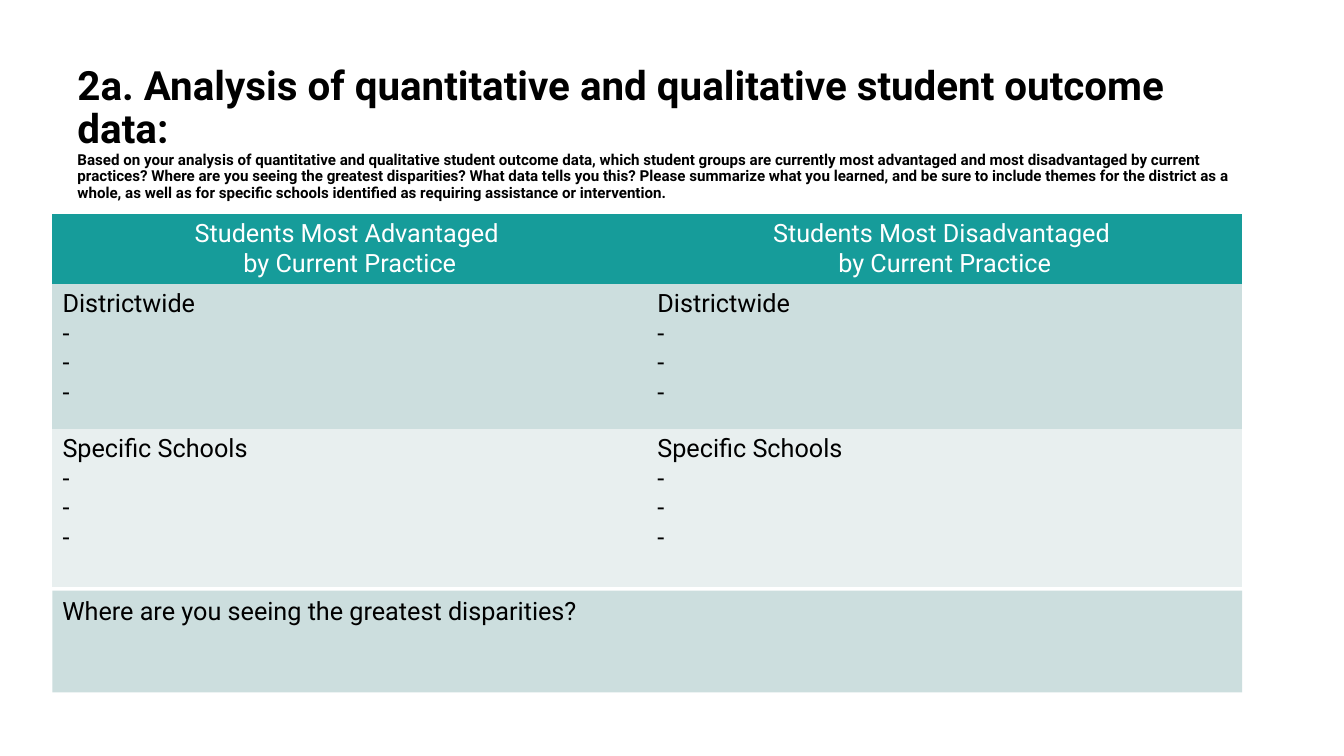
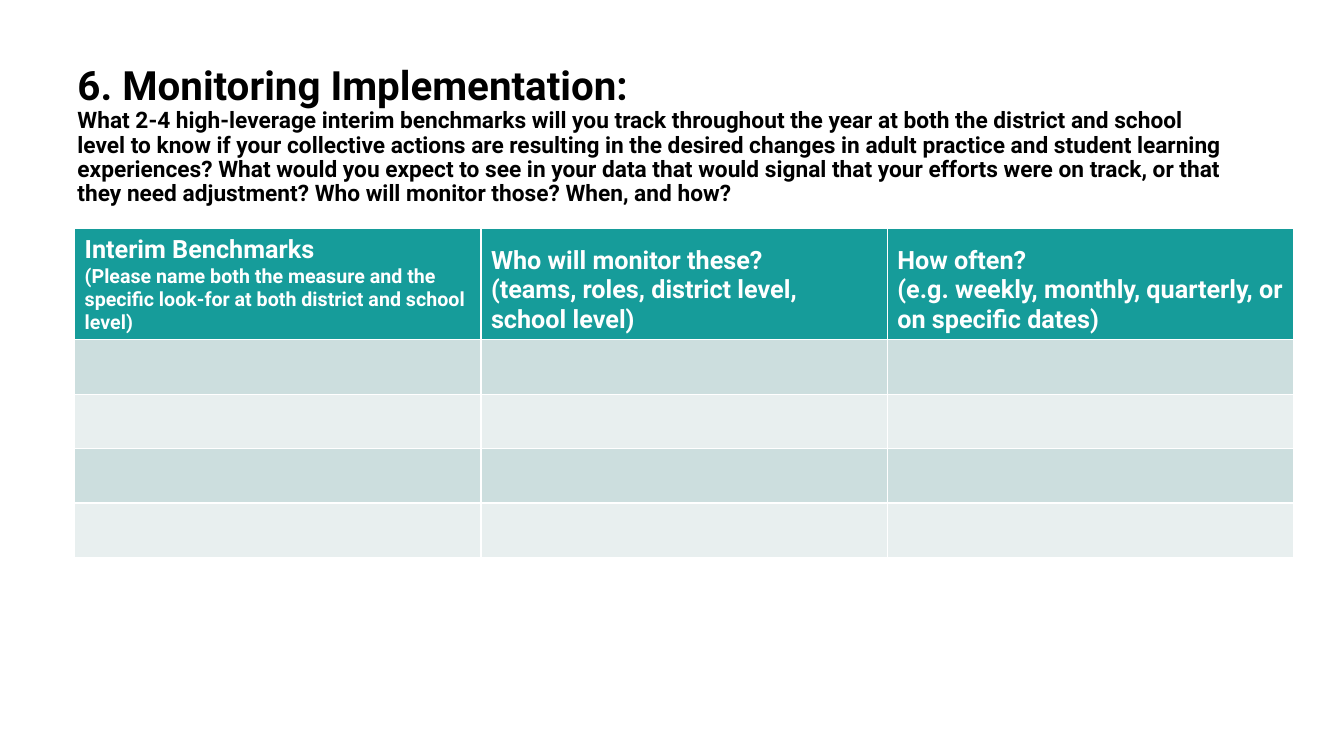
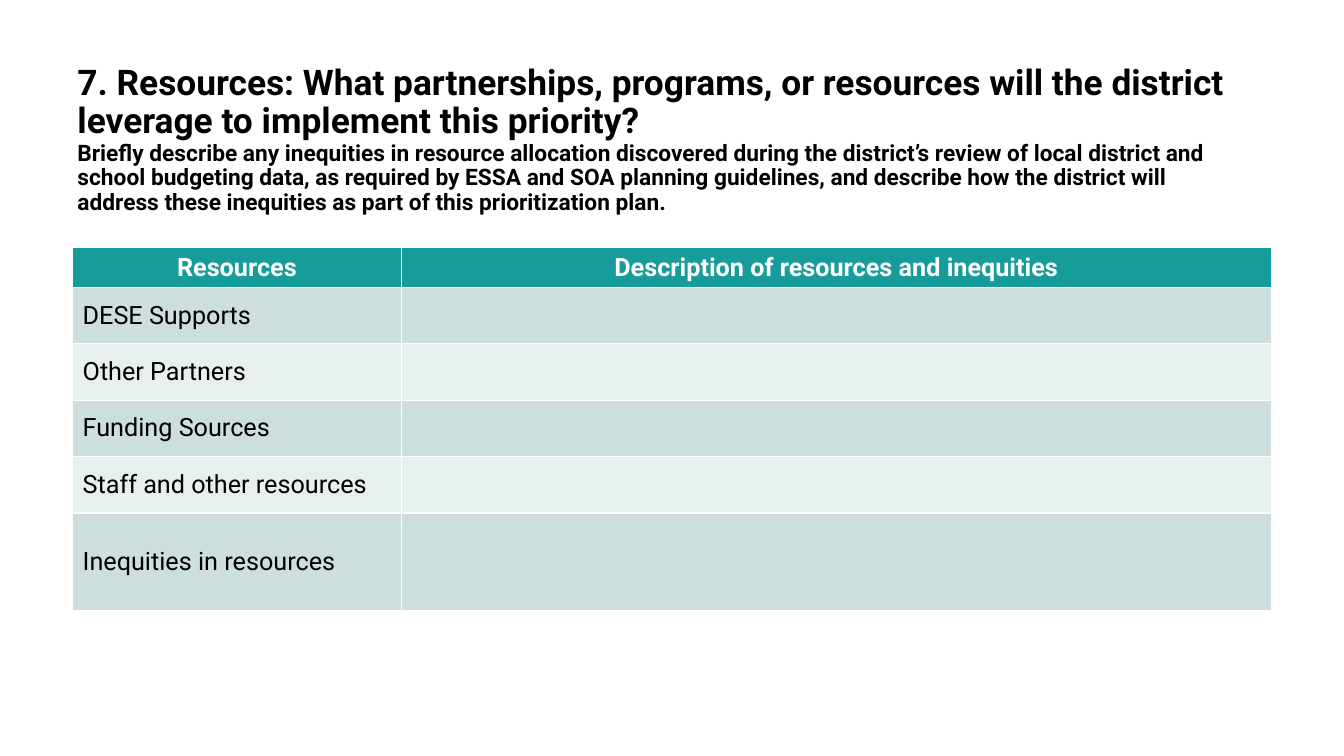
from dataclasses import dataclass

from lxml.etree import SubElement
from pptx import Presentation
from pptx.dml.color import RGBColor
from pptx.enum.shapes import MSO_SHAPE
from pptx.enum.text import MSO_ANCHOR as ANCHOR, PP_ALIGN as ALIGN
from pptx.oxml.ns import qn
from pptx.util import Inches, Pt


@dataclass(frozen=True)
class Theme:
    font: str = "Roboto"
    black: str = "000000"
    white: str = "FFFFFF"
    teal: str = "169C9A"
    bands: tuple = ("CCDEDE", "E8EFEF")
    body: float = 18
    small: float = 14
    heading: float = 28.8
    heading_long: float = 25.2
    prompt: float = 16.2
    prompt_long: float = 10.8
    border: float = 1
    plain_table: str = "{2D5ABB26-0587-4C30-8999-92F81FD0307C}"


T = Theme()


def write(tf, lines, color=T.black, bold=False, align=ALIGN.LEFT, spacing=1.0):
    """Fill a text frame with one paragraph per (text, size) pair."""
    tf.word_wrap = True
    for i, (text, size) in enumerate(lines):
        p = tf.paragraphs[0] if i == 0 else tf.add_paragraph()
        p.alignment, p.line_spacing = align, spacing
        r = p.add_run()
        r.text = text
        style = {"name": T.font, "size": Pt(size), "bold": bold}
        for key, value in style.items():
            setattr(r.font, key, value)
        r.font.color.rgb = RGBColor.from_string(color)


prs = Presentation()
prs.slide_width, prs.slide_height = Inches(13.33), Inches(7.5)

# Content of each slide; cells are lists of (text, size) lines
districtwide, schools = (
    [(text, T.body) for text in (name, "-", "-", "-")]
    for name in ("Districtwide", "Specific Schools"))
resources = ("DESE Supports", "Other Partners", "Funding Sources",
             "Staff and other resources", "Inequities in resources")

pages = [
    dict(
        title=[
            ("2a. Analysis of quantitative and qualitative student outcome data:", T.heading),
            ("Based on your analysis of quantitative and qualitative student outcome data, "
             "which student groups are currently most advantaged and most disadvantaged by "
             "current practices? Where are you seeing the greatest disparities? What data "
             "tells you this? Please summarize what you learned, and be sure to include "
             "themes for the district as a whole, as well as for specific schools identified "
             "as requiring assistance or intervention.", T.prompt_long)],
        at=(0.52, 2.12), cols=[5.9, 5.9], rows=[0.69, 1.44, 1.56],
        header_bold=False, header_align=ALIGN.CENTER, header_anchor=ANCHOR.MIDDLE,
        body_anchor=ANCHOR.TOP, grid=False,
        cells=[[[(f"Students Most {group} ", T.body), ("by Current Practice", T.body)]
                for group in ("Advantaged", "Disadvantaged")],
               [districtwide] * 2, [schools] * 2]),
    dict(
        title=[
            ("6. Monitoring Implementation:", T.heading),
            ("What 2-4 high-leverage interim benchmarks will you track throughout the year "
             "at both the district and school level to know if your collective actions are "
             "resulting in the desired changes in adult practice and student learning "
             "experiences? What would you expect to see in your data that would signal that "
             "your efforts were on track, or that they need adjustment? Who will monitor "
             "those? When, and how?", T.prompt)],
        at=(0.74, 2.27), cols=[4.03] * 3, rows=[1.08] + [0.54] * 4,
        header_bold=True, header_align=ALIGN.LEFT, header_anchor=ANCHOR.BOTTOM,
        body_anchor=ANCHOR.TOP, grid=True,
        cells=[[[("Interim Benchmarks", T.body),
                 ("(Please name both the measure and the specific look-for at both "
                  "district and school level)", T.small)],
                [("Who will monitor these?", T.body),
                 ("(teams, roles, district level, school level)", T.body)],
                [("How often?", T.body),
                 ("(e.g. weekly, monthly, quarterly, or on specific dates)", T.body)]]]
        + [[[]] * 3] * 4),
    dict(
        title=[
            ("7. Resources: What partnerships, programs, or resources will the district "
             "leverage to implement this priority?", T.heading_long),
            ("Briefly describe any inequities in resource allocation discovered during the "
             "district’s review of local district and school budgeting data, as required by "
             "ESSA and SOA planning guidelines, and describe how the district will address "
             "these inequities as part of this prioritization plan.", T.prompt)],
        at=(0.72, 2.45), cols=[3.26, 8.63], rows=[0.4] + [0.56] * 4 + [0.97],
        header_bold=True, header_align=ALIGN.CENTER, header_anchor=ANCHOR.BOTTOM,
        body_anchor=ANCHOR.MIDDLE, grid=True,
        cells=[[[("Resources", T.body)],
                [("Description of resources and inequities", T.body)]]]
        + [[[(name, T.body)], []] for name in resources]),
]

for page in pages:
    s = prs.slides.add_slide(prs.slide_layouts[6])

    # Title with its prompt
    box = s.shapes.add_textbox(Inches(0.67), Inches(0.6), Inches(11.65), Inches(1.24))
    write(box.text_frame, page["title"], bold=True, spacing=0.9)

    # Table
    cols, rows = page["cols"], page["rows"]
    left, top = page["at"]
    table = s.shapes.add_table(len(rows), len(cols), Inches(left), Inches(top),
                               Inches(sum(cols)), Inches(sum(rows))).table
    table._tbl.tblPr.find(qn("a:tableStyleId")).text = T.plain_table
    for column, width in zip(table.columns, cols):
        column.width = Inches(width)
    for row, height in zip(table.rows, rows):
        row.height = Inches(height)

    for i, row in enumerate(page["cells"]):
        header = i == 0
        for j, lines in enumerate(row):
            cell = table.cell(i, j)
            cell.vertical_anchor = page["header_anchor" if header else "body_anchor"]

            # White grid lines, which come before the fill in the cell's XML
            if page["grid"]:
                for side in ("a:lnL", "a:lnR", "a:lnT", "a:lnB"):
                    ln = SubElement(cell._tc.get_or_add_tcPr(), qn(side), w=str(Pt(T.border)))
                    SubElement(SubElement(ln, qn("a:solidFill")), qn("a:srgbClr"), val=T.white)

            cell.fill.solid()
            cell.fill.fore_color.rgb = RGBColor.from_string(
                T.teal if header else T.bands[(i - 1) % 2])
            if header:
                write(cell.text_frame, lines, T.white, page["header_bold"],
                      page["header_align"])
            else:
                write(cell.text_frame, lines)

# Disparities panel below the first table
sp = prs.slides[0].shapes.add_shape(MSO_SHAPE.RECTANGLE, Inches(0.52), Inches(5.86),
                                    Inches(11.8), Inches(1.01))
sp.shadow.inherit = False
sp.fill.solid()
sp.fill.fore_color.rgb = RGBColor.from_string(T.bands[0])
sp.line.fill.background()
sp.text_frame.vertical_anchor = ANCHOR.TOP
write(sp.text_frame, [("Where are you seeing the greatest disparities?", T.body)])

prs.save("out.pptx")
